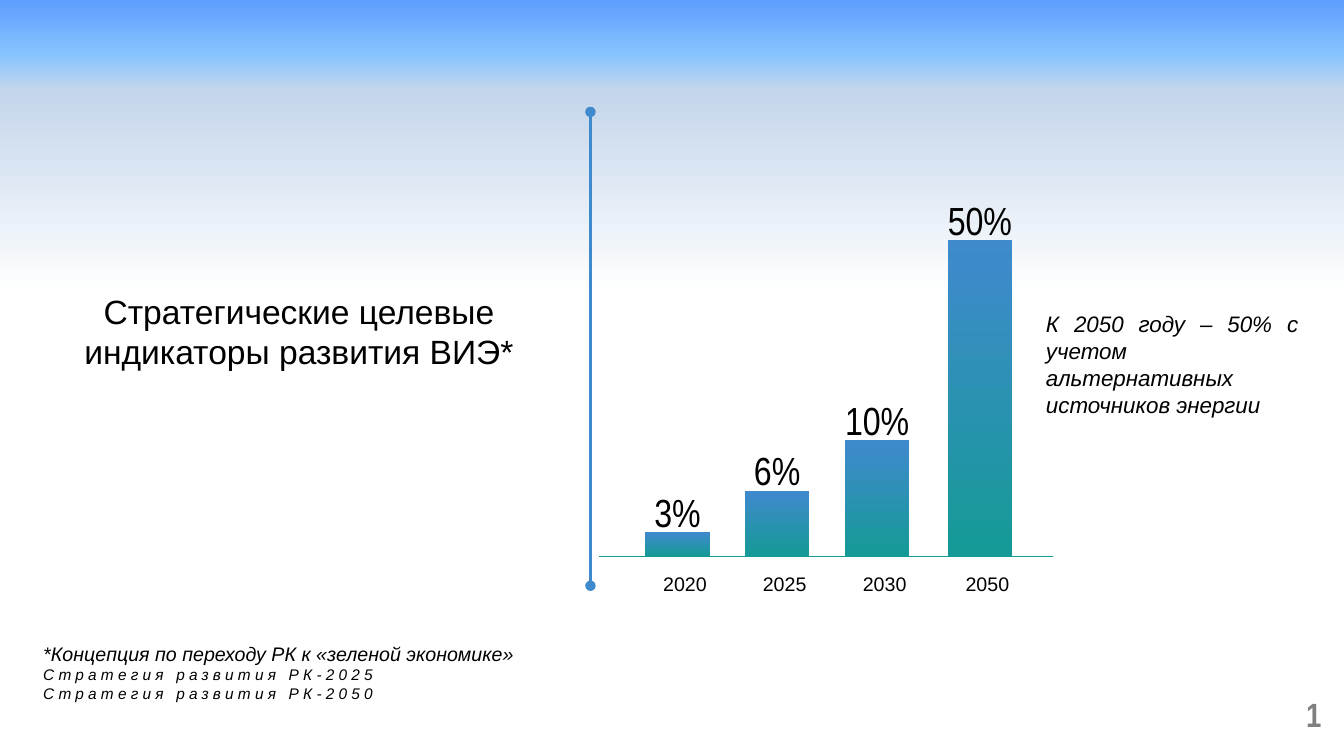
from lxml.etree import SubElement
from pptx import Presentation
from pptx.dml.color import RGBColor
from pptx.enum.shapes import MSO_CONNECTOR, MSO_SHAPE
from pptx.enum.text import MSO_ANCHOR, MSO_AUTO_SIZE, PP_ALIGN
from pptx.oxml.ns import qn
from pptx.util import Cm, Pt

BLUE, TEAL, BLACK = "3F89CD", "169A97", "000000"


def blend(fill, node, stops):
    """Give a fill a top-to-bottom gradient; node is the XML that holds it."""
    fill.gradient()
    fill.gradient_angle = 270
    marks = node.find(".//" + qn("a:gsLst"))
    for mark in list(marks):
        marks.remove(mark)
    for place, tint in stops:
        mark = SubElement(marks, qn("a:gs"), pos=str(place * 1000))
        SubElement(mark, qn("a:srgbClr"), val=tint)


def write(box, lines, align, tint=BLACK, font="Arial", bold=False, italic=False):
    """Fill a box with (text, size, letter spacing) lines."""
    frame = box.text_frame
    frame.word_wrap = True
    frame.auto_size = MSO_AUTO_SIZE.NONE
    for i, (text, size, gap) in enumerate(lines):
        para = frame.add_paragraph() if i else frame.paragraphs[0]
        para.alignment = align
        run = para.add_run()
        run.text = text
        run.font.name = font
        run.font.size = Pt(size)
        run.font.bold = bold
        run.font.italic = italic
        run.font.color.rgb = RGBColor.from_string(tint)
        if gap:
            run.font._element.set("spc", str(gap * 100))


deck = Presentation()
deck.slide_width, deck.slide_height = Cm(33.87), Cm(19.05)
slide = deck.slides.add_slide(deck.slide_layouts[5])
shapes = slide.shapes
blend(slide.background.fill, slide._element,
      [(0, "5E9EFF"), (7, "85C2FF"), (12, "C4D6EB"), (39, "FFFFFF"), (99, "FFFFFF")])

# Title
title = shapes.title
title.left, title.top, title.width, title.height = Cm(0.84), Cm(7.19), Cm(13.39), Cm(2.31)
title.text_frame.vertical_anchor = MSO_ANCHOR.MIDDLE
write(title, [("Стратегические целевые индикаторы развития ВИЭ*", 24, 0)], PP_ALIGN.CENTER)

# Bars with their shares and years
base, wide = 14.03, 1.63
bars = [("2020", "3%", 16.26, 13.41), ("2025", "6%", 18.77, 12.37),
        ("2030", "10%", 21.29, 11.1), ("2050", "50%", 23.88, 6.05)]
for year, share, left, top in bars:
    bar = shapes.add_shape(MSO_SHAPE.RECTANGLE, Cm(left), Cm(top), Cm(wide), Cm(base - top))
    bar.shadow.inherit = False
    bar.line.fill.background()
    blend(bar.fill, bar._element.spPr, [(0, BLUE), (98, TEAL)])
    label = shapes.add_textbox(Cm(left - 0.4), Cm(top - 1.24), Cm(wide + 0.8), Cm(1.45))
    write(label, [(share, 28, 0)], PP_ALIGN.CENTER, font="Arial Narrow")
    label = shapes.add_textbox(Cm(left - 0.01), Cm(14.28), Cm(wide + 0.4), Cm(0.84))
    write(label, [(year, 14, 0)], PP_ALIGN.CENTER)

# Divider with round ends, and the base line
rules = [(14.88, 2.82, 14.88, 14.76, BLUE, 2.5, ("headEnd", "tailEnd")),
         (26.54, base, 15.09, base, TEAL, 0.5, ())]
for x1, y1, x2, y2, tint, thick, ends in rules:
    rule = shapes.add_connector(MSO_CONNECTOR.STRAIGHT, Cm(x1), Cm(y1), Cm(x2), Cm(y2))
    rule.line.color.rgb = RGBColor.from_string(tint)
    rule.line.width = Pt(thick)
    props = rule._element.spPr
    for end in ends:
        SubElement(props.find(qn("a:ln")), qn("a:" + end), type="oval")
    SubElement(props, qn("a:effectLst"))

# Notes and slide number
note = shapes.add_textbox(Cm(26.11), Cm(7.7), Cm(6.86), Cm(3))
write(note, [("К 2050 году – 50% с учетом альтернативных источников энергии", 16, 0)],
      PP_ALIGN.JUSTIFY, italic=True)
source = shapes.add_textbox(Cm(0.84), Cm(16.05), Cm(17.81), Cm(1.8))
write(source, [("*Концепция по переходу РК к «зеленой экономике»", 14, 0),
               ("Стратегия развития РК-2025", 11, 3),
               ("Стратегия развития РК-2050", 11, 3)], PP_ALIGN.JUSTIFY, italic=True)
number = shapes.add_textbox(Cm(32.36), Cm(17.35), Cm(1.5), Cm(1.27))
write(number, [("1", 24, 0)], PP_ALIGN.CENTER, "808080", "Arial Narrow", bold=True)

deck.save("out.pptx")
